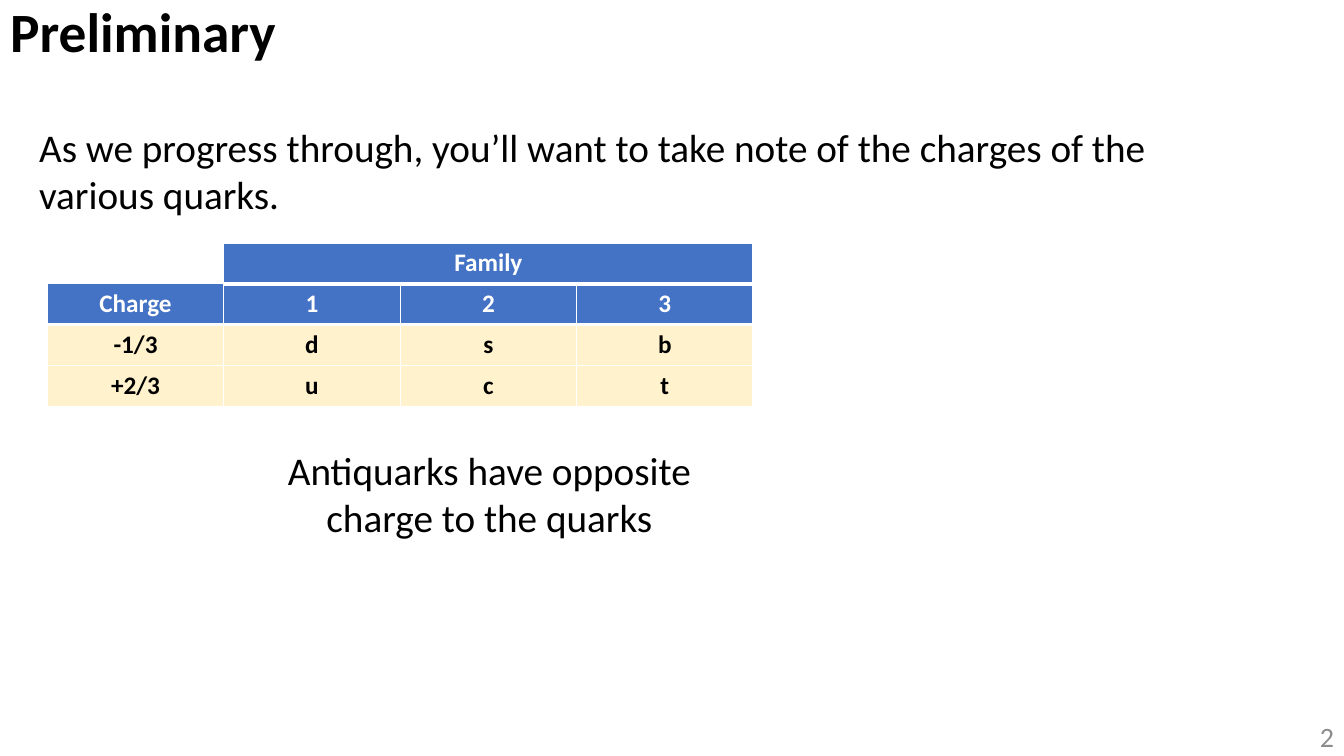
import dataclasses
import typing

import lxml.etree
import pptx
import pptx.dml.color
import pptx.enum.text
import pptx.oxml.ns
import pptx.util

# Grid of 160 columns by 90 rows, each unit 6 points
UNIT = pptx.util.Pt(6)
COLS, ROWS = 160, 90
HUES = {"ink": "000000", "gray": "8C8C8C", "blue": "4472C4",
        "cream": "FFF2CC", "white": "FFFFFF"}
ALIGN = pptx.enum.text.PP_ALIGN
MID = pptx.enum.text.MSO_ANCHOR.MIDDLE


@dataclasses.dataclass
class Area:
    col: float
    row: float
    wide: float
    high: float

    def spans(self) -> list[int]:
        return [grid(n) for n in (self.col, self.row, self.wide, self.high)]


@dataclasses.dataclass
class Style:
    size: float
    hue: str = "ink"
    bold: bool = False
    align: typing.Any = ALIGN.LEFT


@dataclasses.dataclass
class Note:
    area: Area
    lines: list[str]
    style: Style
    anchor: typing.Any = pptx.enum.text.MSO_ANCHOR.TOP


@dataclasses.dataclass
class Chart:
    area: Area
    cells: list[list[str]]


def grid(count: float) -> int:
    return round(count * UNIT)


def color(name: str) -> pptx.dml.color.RGBColor:
    return pptx.dml.color.RGBColor.from_string(HUES[name])


def write(frame: typing.Any, lines: list[str], style: Style) -> None:
    para = frame.paragraphs[0]
    para.alignment = style.align
    for i, line in enumerate(lines):
        if i:
            para.add_line_break()
        run = para.add_run()
        run.text = line
        run.font.name = "Calibri"
        run.font.size = pptx.util.Pt(style.size)
        run.font.bold = style.bold
        run.font.color.rgb = color(style.hue)


def place(slide: typing.Any, note: Note) -> None:
    frame = slide.shapes.add_textbox(*note.area.spans()).text_frame
    frame.word_wrap = False
    frame.vertical_anchor = note.anchor
    write(frame, note.lines, note.style)


def edge(cell: typing.Any, sides: dict[str, int]) -> None:
    props = cell._tc.get_or_add_tcPr()
    name = pptx.oxml.ns.qn
    for side, width in sides.items():
        line = lxml.etree.SubElement(props, name(f"a:ln{side}"),
                                     w=str(pptx.util.Pt(width)))
        fill = lxml.etree.SubElement(line, name("a:solidFill"))
        lxml.etree.SubElement(fill, name("a:srgbClr"), val=HUES["white"])


def tabulate(slide: typing.Any, chart: Chart) -> None:
    shape = slide.shapes.add_table(len(chart.cells), len(chart.cells[0]),
                                   *chart.area.spans())
    for r, texts in enumerate(chart.cells):
        head = r == 0
        for c, text in enumerate(texts):
            cell = shape.table.cell(r, c)
            # The header row has a thick lower edge
            edge(cell, {"L": 1, "R": 1, "T": 1 if head or r > 1 else 3,
                        "B": 3 if head else 1})
            cell.fill.solid()
            cell.fill.fore_color.rgb = color("blue" if head else "cream")
            write(cell.text_frame, [text],
                  Style(18, "white" if head else "ink", True, ALIGN.CENTER))


# Content
LEFT, TOP, STEP, HIGH = 5.64, 28.92, 21, 4.86
NOTES = [
    Note(Area(124, 85.2, 36, 4.8), ["2"],
         Style(20, "gray", align=ALIGN.RIGHT), MID),
    Note(Area(32.76, 52.56, 51, 12.48),
         ["Antiquarks have opposite", "charge to the quarks"],
         Style(28, align=ALIGN.CENTER)),
    Note(Area(3.48, 14.04, 135.6, 12.48),
         ["As we progress through, you’ll want to take note of the charges of the",
          "various quarks."], Style(28)),
]
CHARTS = [
    Chart(Area(LEFT, TOP + HIGH, 4 * STEP, 3 * HIGH),
          [["Charge", "1", "2", "3"],
           ["-1/3", "d", "s", "b"],
           ["+2/3", "u", "c", "t"]]),
    Chart(Area(LEFT + STEP, TOP, 3 * STEP, HIGH), [["Family"]]),
]


def main() -> None:
    deck = pptx.Presentation()
    deck.slide_width, deck.slide_height = grid(COLS), grid(ROWS)
    slide = deck.slides.add_slide(deck.slide_layouts[5])

    # Title
    title = slide.shapes.title
    title.left, title.top, title.width, title.height = Area(0, 0, 138, 8.16).spans()
    title.text_frame.vertical_anchor = MID
    write(title.text_frame, ["Preliminary"], Style(39.6, bold=True))
    title.text_frame.paragraphs[0].line_spacing = 0.9

    # Body
    for note in NOTES:
        place(slide, note)
    for chart in CHARTS:
        tabulate(slide, chart)
    deck.save("out.pptx")


if __name__ == "__main__":
    main()
